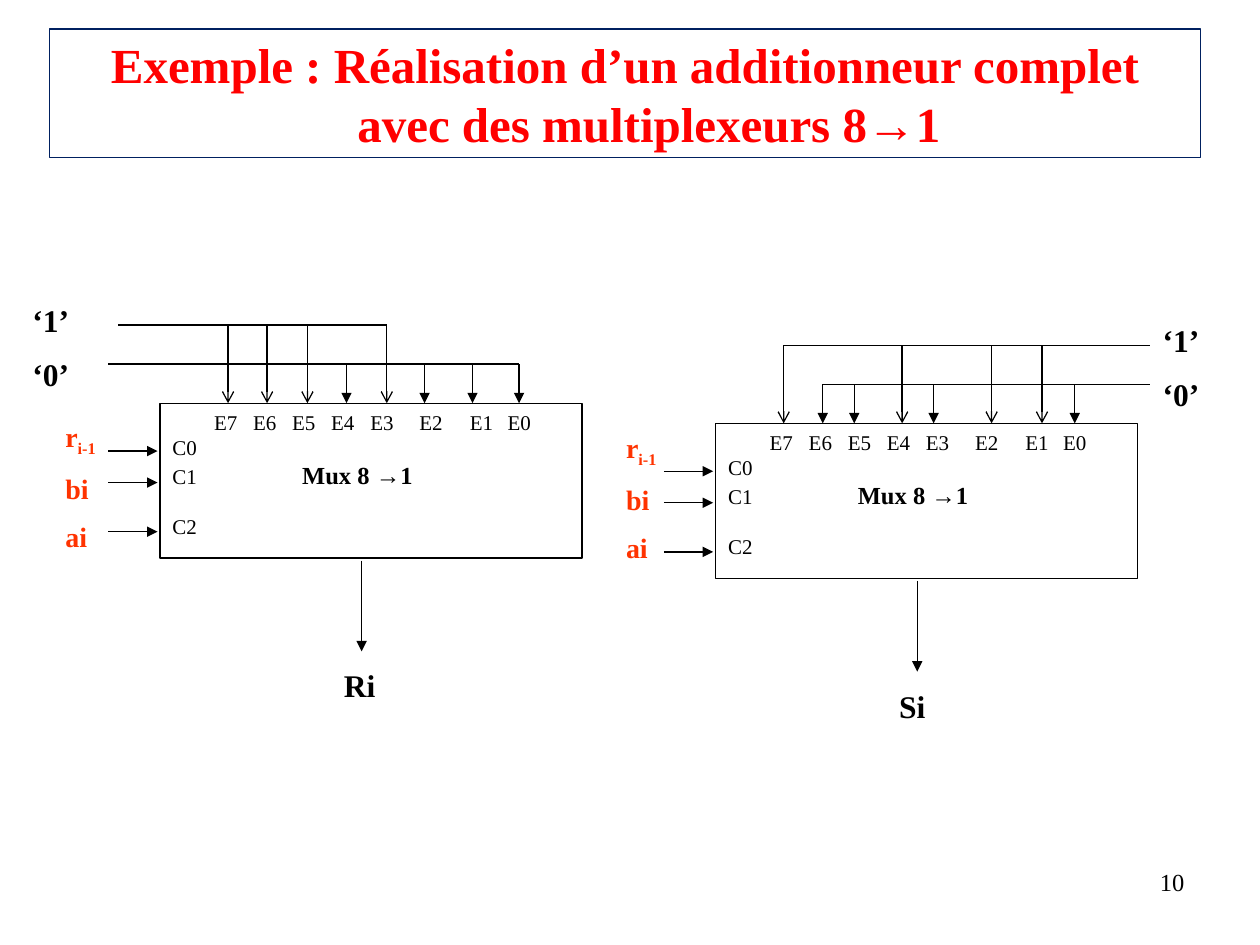
from pptx import Presentation
from pptx.dml.color import RGBColor
from pptx.enum.shapes import MSO_CONNECTOR, MSO_SHAPE
from pptx.enum.text import MSO_ANCHOR, MSO_AUTO_SIZE, PP_ALIGN
from pptx.oxml.ns import qn
from pptx.util import Inches, Pt
from lxml import etree

LEFT, CENTER, RIGHT = PP_ALIGN.LEFT, PP_ALIGN.CENTER, PP_ALIGN.RIGHT
TOP, MIDDLE = MSO_ANCHOR.TOP, MSO_ANCHOR.MIDDLE
NO_FIT = MSO_AUTO_SIZE.NONE
RECT, STRAIGHT = MSO_SHAPE.RECTANGLE, MSO_CONNECTOR.STRAIGHT

COLORS = {"ink": "000000", "paper": "FFFFFF", "title": "FF0000",
          "frame": "002060", "input": "FF3300"}
FONT = "Times New Roman"
WIDTH = Pt(0.75)

# Mux geometry, relative to the top left corner of its box
MUX_W, MUX_H = 3.35, 1.23
ONE_Y, ZERO_Y = -0.62, -0.31
CTRL_YS = (0.38, 0.63, 1.02)
PIN_TABS = (0.33, 0.64, 0.95, 1.26, 1.57, 1.96, 2.36, 2.66)
NAME_TAB = 1.03


class Board:
    """Holds the style and the current slide."""

    def __init__(self, slide):
        self.slide = slide
        self.shapes = slide.shapes

    def color(self, name):
        return RGBColor.from_string(COLORS[name])

    def run(self, par, text, size, bold=False, color="ink", base=None):
        run = par.add_run()
        run.text = text
        font = run.font
        font.name, font.size, font.bold = FONT, Pt(size), bold
        font.color.rgb = self.color(color)
        if base:
            run._r.get_or_add_rPr().set("baseline", str(base))

    def frame(self, shape, anchor=TOP):
        frame = shape.text_frame
        frame.word_wrap = True
        frame.auto_size = NO_FIT
        frame.vertical_anchor = anchor
        return frame

    def paint(self, shape, line):
        shape.fill.solid()
        shape.fill.fore_color.rgb = self.color("paper")
        shape.line.color.rgb = self.color(line)
        shape.line.width = WIDTH

    def title(self, text, x, y, w, h):
        shape = self.shapes.title
        shape.left, shape.top, shape.width, shape.height = map(Inches, (x, y, w, h))
        self.paint(shape, "frame")
        par = self.frame(shape, MIDDLE).paragraphs[0]
        par.alignment = CENTER
        par.space_before = Pt(5.6)
        props = par._p.get_or_add_pPr()
        props.set("marL", str(Inches(0.38)))
        props.set("indent", str(Inches(-0.38)))
        self.run(par, text, 28, True, "title")

    def label(self, rows, x, y, w, h, size, align=LEFT, bold=True, color="ink"):
        """Each row is a list of (text, baseline) pairs."""
        box = self.shapes.add_textbox(*map(Inches, (x, y, w, h)))
        frame = self.frame(box)
        for i, row in enumerate(rows):
            par = frame.add_paragraph() if i else frame.paragraphs[0]
            par.alignment = align
            par.space_before = Pt(size / 2)
            for text, base in row:
                self.run(par, text, size, bold, color, base)

    def line(self, x1, y1, x2, y2, head=None):
        wire = self.shapes.add_connector(STRAIGHT, *map(Inches, (x1, y1, x2, y2)))
        wire.line.color.rgb = self.color("ink")
        wire.line.width = WIDTH
        if head:
            etree.SubElement(wire.line._get_or_add_ln(), qn("a:tailEnd"), type=head)
        etree.SubElement(wire._element.spPr, qn("a:effectLst"))

    def tabs(self, par, stops):
        tabs = etree.SubElement(par._p.get_or_add_pPr(), qn("a:tabLst"))
        for stop in stops:
            etree.SubElement(tabs, qn("a:tab"), pos=str(Inches(stop)), algn="l")

    def mux(self, x, y):
        box = self.shapes.add_shape(RECT, *map(Inches, (x, y, MUX_W, MUX_H)))
        box.shadow.inherit = False
        self.paint(box, "ink")
        frame = self.frame(box)
        pins = frame.paragraphs[0]
        ctrls = [frame.add_paragraph() for _ in CTRL_YS]
        for par in (pins, *ctrls):
            par.alignment = LEFT
        ctrls[2].space_before = Pt(14)
        self.tabs(pins, PIN_TABS)
        self.tabs(ctrls[1], [NAME_TAB])
        for n in range(7, -1, -1):
            self.run(pins, f"\tE{n}", 12)
        for n, par in enumerate(ctrls):
            self.run(par, f"C{n}", 12)
        self.run(ctrls[1], "\tMux 8 →1", 14, True)

    def wires(self, x, y, bits, cols, one_rail, zero_rail):
        """Ties each input, E7 to E0, to the rail of its bit."""
        for bit, col in zip(bits, cols):
            rail, head = (ONE_Y, "arrow") if bit == "1" else (ZERO_Y, "triangle")
            self.line(x + col, y + rail, x + col, y, head)
        for (start, end), rail in ((one_rail, ONE_Y), (zero_rail, ZERO_Y)):
            self.line(start, y + rail, end, y + rail)
        for ctrl in CTRL_YS:
            self.line(x - 0.41, y + ctrl, x - 0.02, y + ctrl, "triangle")
        self.line(x + 1.6, y + 1.25, x + 1.6, y + 1.97, "triangle")


def main():
    deck = Presentation()
    deck.slide_width, deck.slide_height = Inches(10), Inches(7.5)
    board = Board(deck.slides.add_slide(deck.slide_layouts[5]))

    # Title and page number
    board.title("Exemple : Réalisation d’un additionneur complet "
                "avec des multiplexeurs 8→1", 0.39, 0.23, 9.14, 1.02)
    board.label([[("10", None)]], 7.17, 6.83, 2.33, 0.52, 14, RIGHT, False)

    # Carry on the left, sum on the right
    inputs = [[("r", None), ("i-1", -25000)], [("bi", None)], [("ai", None)]]
    levels = [[("‘1’", None)], [("‘0’", None)]]
    halves = (
        dict(at=(1.27, 3.2), bits="11101000", out="Ri",
             cols=(0.54, 0.85, 1.17, 1.48, 1.8, 2.1, 2.48, 2.85),
             rails=((0.94, 3.07), (0.86, 4.12)),
             level=(0.16, 2.34), names=(0.42, 3.28), result=(2.07, 5.24, 1.57)),
        dict(at=(5.68, 3.36), bits="10010110", out="Si",
             cols=(0.54, 0.85, 1.1, 1.48, 1.73, 2.19, 2.59, 2.85),
             rails=((6.22, 9.13), (6.53, 9.13)),
             level=(9.13, 2.5), names=(4.87, 3.37), result=(6.69, 5.4, 1.1)),
    )
    for half in halves:
        board.label(inputs, *half["names"], 0.79, 1.57, 16, color="input")
        board.label(levels, *half["level"], 0.63, 0.85, 18)
        board.mux(*half["at"])
        board.wires(*half["at"], half["bits"], half["cols"], *half["rails"])
        board.label([[(half["out"], None)]], *half["result"], 0.4, 18, CENTER)

    deck.save("out.pptx")


if __name__ == "__main__":
    main()
